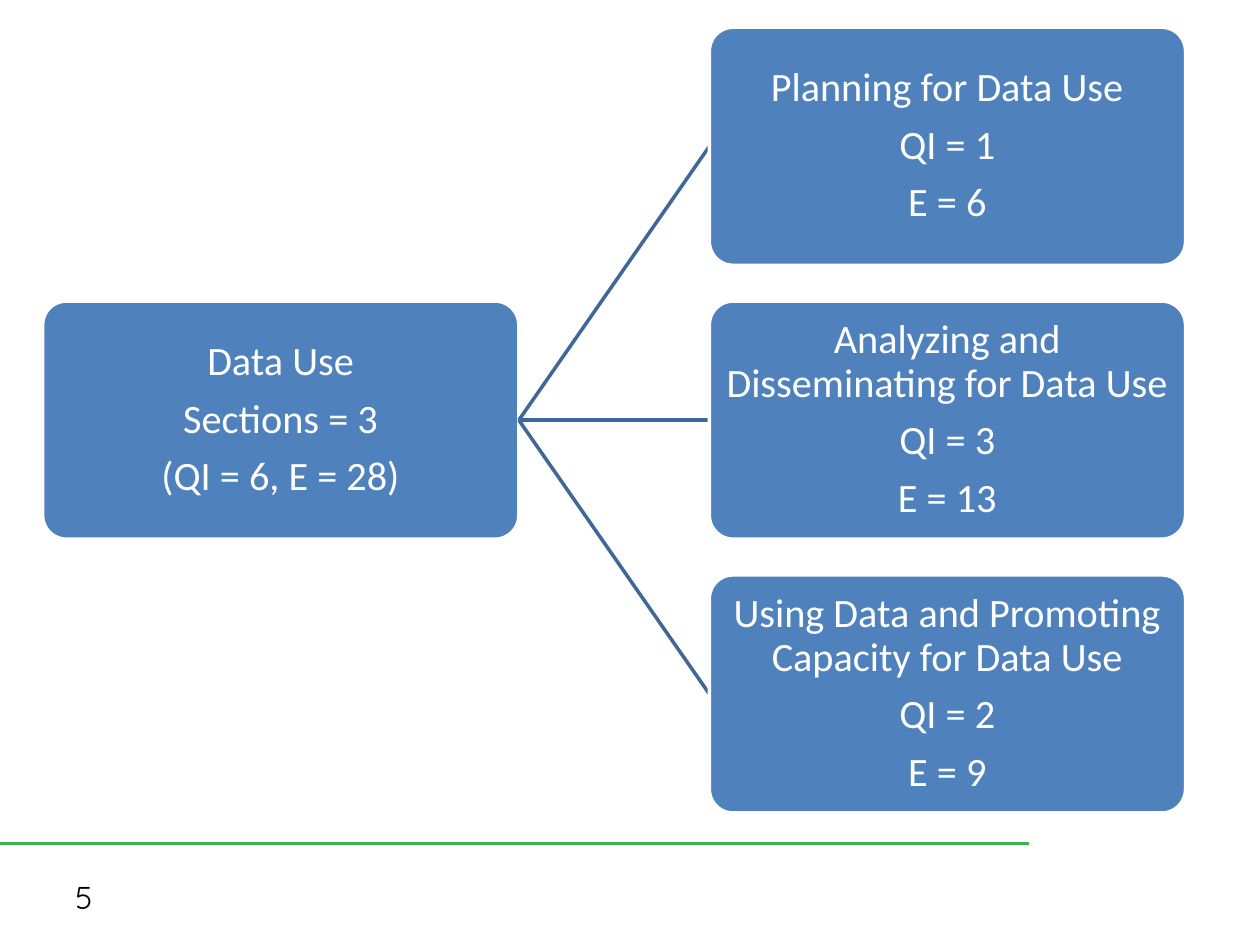
from pptx import Presentation
from pptx.dml.color import RGBColor
from pptx.enum.shapes import MSO_CONNECTOR as Link, MSO_SHAPE as Shape
from pptx.enum.text import MSO_ANCHOR as Anchor, PP_ALIGN as Align
from pptx.oxml.ns import qn
from pptx.util import Cm, Pt
from lxml import etree

# Content
ROOT = ["Data Use", "Sections = 3", "(QI = 6, E = 28)"]
PARTS = [
    ["Planning for Data Use", "QI = 1", "E = 6"],
    ["Analyzing and Disseminating for Data Use", "QI = 3", "E = 13"],
    ["Using Data and Promoting Capacity for Data Use", "QI = 2", "E = 9"],
]
PAGE = "5"

# Colours
WHITE = RGBColor(0xFF, 0xFF, 0xFF)
BLACK = RGBColor(0, 0, 0)
BLUE = RGBColor(0x4F, 0x81, 0xBD)
NAVY = RGBColor(0x3F, 0x67, 0x97)
GREEN = RGBColor(0x39, 0xB5, 0x4A)

# Layout in centimetres
WIDE, HIGH = 9.6, 4.8
ROOT_X, PART_X = 0.86, 14.3
TOP, STEP = 0.55, 5.52

deck = Presentation()
deck.slide_width, deck.slide_height = Cm(25.4), Cm(19.05)
slide = deck.slides.add_slide(deck.slide_layouts[6])


def write(shape, lines, font="Calibri", size=23, color=WHITE,
          align=Align.CENTER, inset=0.04, spacing=0.9, after=8):
    frame = shape.text_frame
    frame.word_wrap = True
    frame.vertical_anchor = Anchor.MIDDLE
    frame.margin_left = frame.margin_right = Cm(inset)
    frame.margin_top = frame.margin_bottom = Cm(0.04)
    for i, line in enumerate(lines):
        para = frame.add_paragraph() if i else frame.paragraphs[0]
        para.alignment = align
        para.line_spacing = spacing
        para.space_after = Pt(after)
        run = para.add_run()
        run.text = line
        run.font.name = font
        run.font.size = Pt(size)
        run.font.color.rgb = color


def draw_line(x1, y1, x2, y2, color, width):
    line = slide.shapes.add_connector(
        Link.STRAIGHT, Cm(x1), Cm(y1), Cm(x2), Cm(y2))
    line.line.color.rgb = color
    line.line.width = Pt(width)
    etree.SubElement(line._element.spPr, qn("a:effectLst"))


def draw_box(x, y, lines):
    box = slide.shapes.add_shape(
        Shape.ROUNDED_RECTANGLE, Cm(x), Cm(y), Cm(WIDE), Cm(HIGH))
    box.adjustments[0] = 0.1
    box.shadow.inherit = False
    box.fill.solid()
    box.fill.fore_color.rgb = BLUE
    box.line.color.rgb = WHITE
    box.line.width = Pt(2)
    write(box, lines)


# Footer rule and page number
draw_line(0, 17, 20.75, 17, GREEN, 1.5)
page = slide.shapes.add_textbox(Cm(1.27), Cm(17.58), Cm(5.93), Cm(1.01))
write(page, [PAGE], font="Quicksand", size=18, color=BLACK,
      align=Align.LEFT, inset=0.25, spacing=1, after=0)

# Tree: root beside the middle part, one line to each part
root_y = TOP + STEP * (len(PARTS) - 1) / 2
draw_box(ROOT_X, root_y, ROOT)
for i, lines in enumerate(PARTS):
    y = TOP + STEP * i
    draw_line(ROOT_X + WIDE, root_y + HIGH / 2, PART_X, y + HIGH / 2, NAVY, 2)
    draw_box(PART_X, y, lines)

deck.save("out.pptx")
